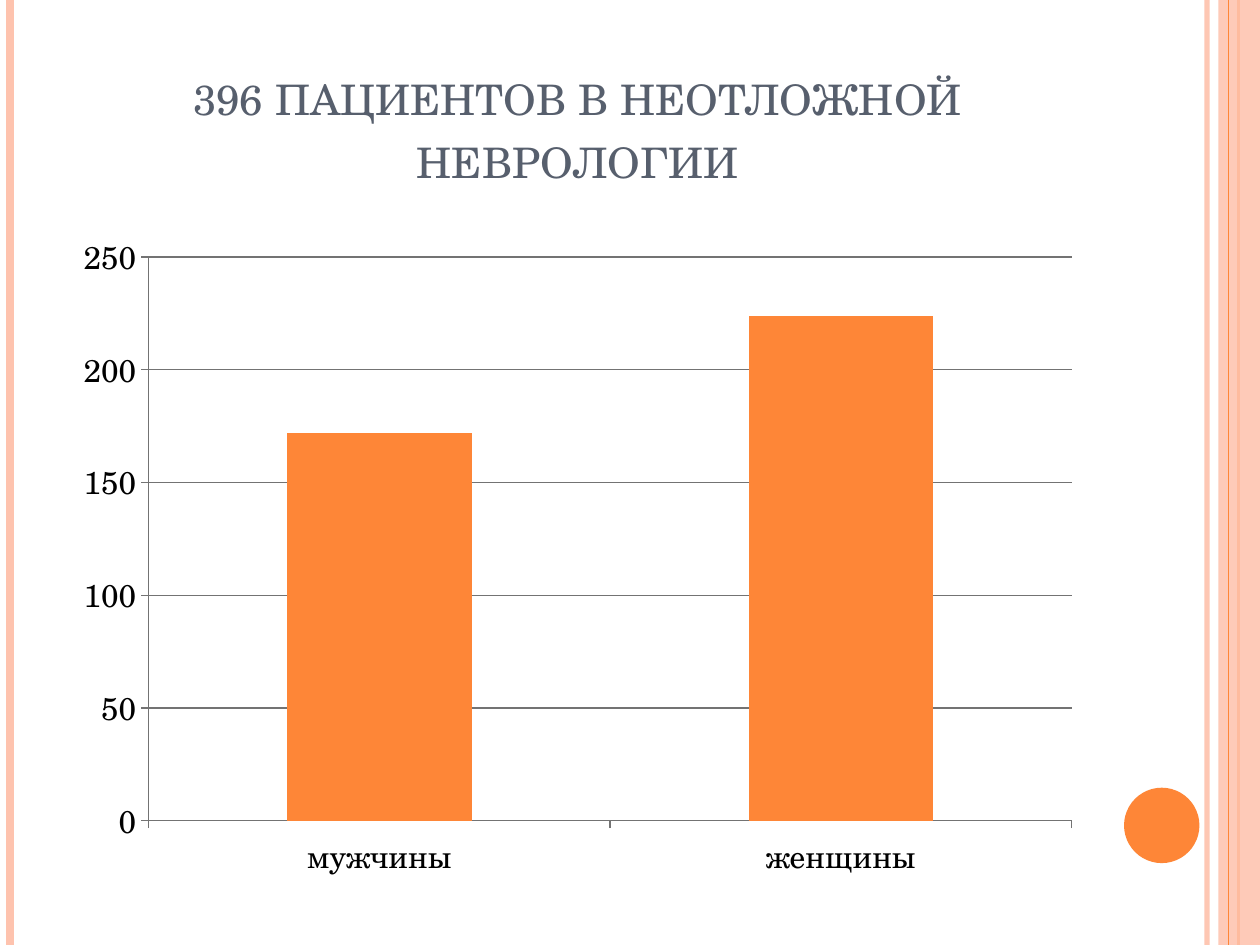
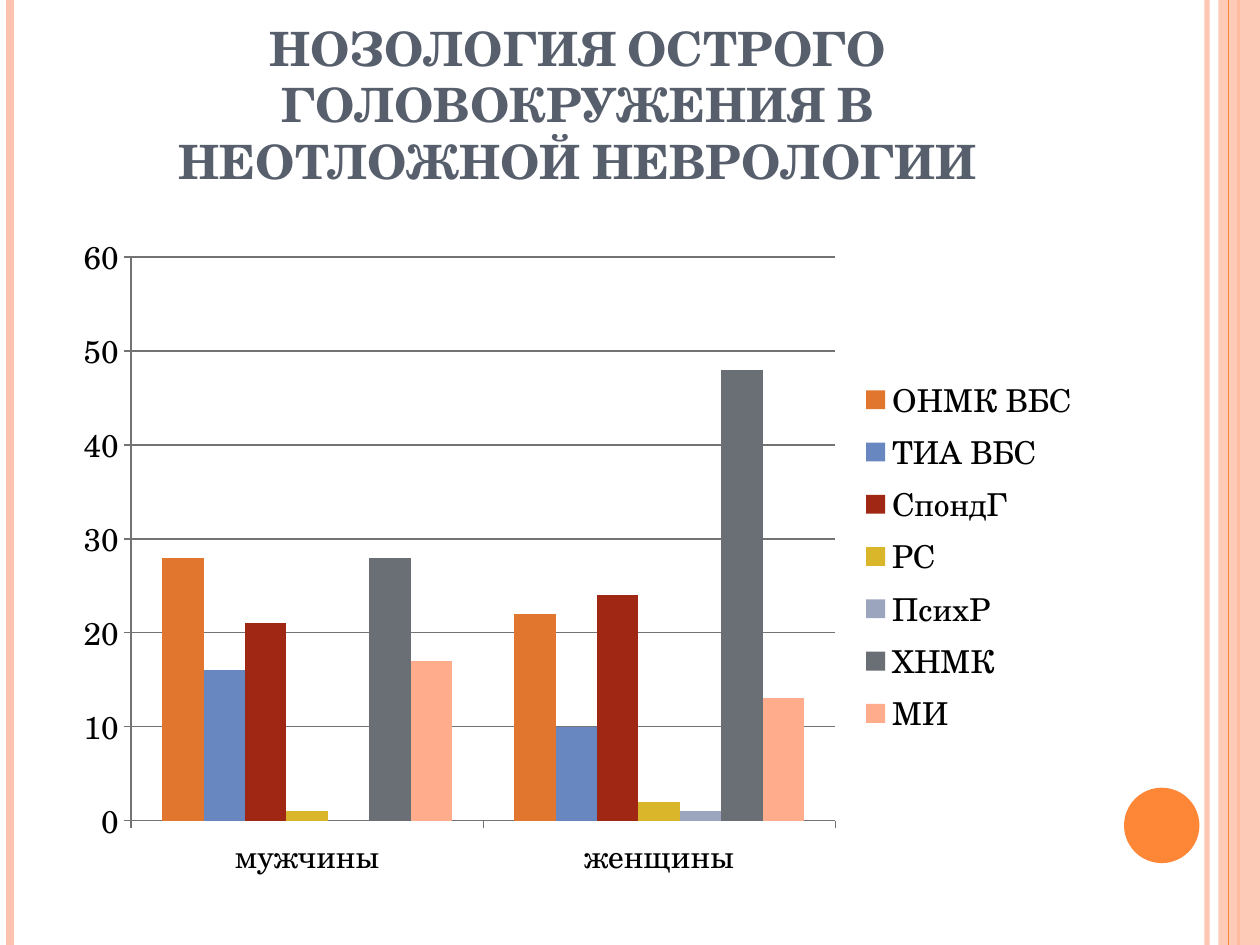
from pptx import Presentation
from pptx import util as u
from pptx.chart import data as chart_data
from pptx.dml.color import RGBColor
from pptx.enum import chart as ch, shapes, text
from pptx.oxml import ns, xmlchemy

# Shared style
ORANGE = RGBColor(0xFE, 0x86, 0x37)
PEACH = RGBColor(0xFE, 0xC3, 0xAE)
SLATE = RGBColor(0x57, 0x5F, 0x6D)
BLACK = RGBColor(0, 0, 0)
AXIS_GREY = RGBColor(0x73, 0x73, 0x73)
RUST = RGBColor(0xE1, 0x77, 0x2F)
BLUE = RGBColor(0x68, 0x87, 0xC0)
RED = RGBColor(0x9F, 0x27, 0x14)
YELLOW = RGBColor(0xDA, 0xB6, 0x2A)
LAVENDER = RGBColor(0x9C, 0xA5, 0xBE)
STEEL = RGBColor(0x6A, 0x6E, 0x75)
SALMON = RGBColor(0xFF, 0xAC, 0x8C)
FONT = "TeX Gyre Schola"

# Boxes: left, top, width, height in cm
SLIDE_W, SLIDE_H = 25.4, 19.05
TITLE_BOX = (1.27, 0.76, 20.75, 3.18)
CHART_BOX = (1.27, 4.45, 20.75, 13.54)
BAND_BOX = (24.56, 0, 0.84, SLIDE_H)
DISC_BOX = (22.66, 15.88, 1.52, 1.52)

GENDERS = ("мужчины", "женщины")
PATIENTS = [("Series 1", (172, 224), ORANGE)]
DIAGNOSES = [
    ("ОНМК ВБС", (28, 22), RUST),
    ("ТИА ВБС", (16, 10), BLUE),
    ("СпондГ", (21, 24), RED),
    ("РС", (1, 2), YELLOW),
    ("ПсихР", (None, 1), LAVENDER),
    ("ХНМК", (28, 48), STEEL),
    ("МИ", (17, 13), SALMON),
]


def cm(box):
    return [u.Cm(v) for v in box]


def set_all(target, values):
    for name, value in values.items():
        setattr(target, name, value)


def set_alpha(sp, percent):
    color = next(sp._element.spPr.iter(ns.qn("a:srgbClr")))
    xmlchemy.OxmlElement("a:alpha")
    alpha = color.makeelement(ns.qn("a:alpha"), {"val": str(percent * 1000)})
    color.append(alpha)


def add_stripe(s, x, color, width, alpha=100):
    line = s.shapes.add_connector(
        shapes.MSO_CONNECTOR.STRAIGHT, *cm((x, 0, x, SLIDE_H)))
    line.line.color.rgb = color
    line.line.width = u.Pt(width)
    line._element.spPr.append(xmlchemy.OxmlElement("a:effectLst"))
    if alpha < 100:
        set_alpha(line, alpha)


def add_solid(s, kind, box, color):
    sp = s.shapes.add_shape(kind, *cm(box))
    sp.shadow.inherit = False
    sp.fill.solid()
    sp.fill.fore_color.rgb = color
    sp.line.fill.background()
    return sp


def add_frame(s):
    """Vertical stripes, right-hand band and disc."""
    add_stripe(s, 24.33, PEACH, 3, alpha=93)
    add_stripe(s, 0.2, PEACH, 4.5)
    add_stripe(s, 24.97, ORANGE, 1.5)
    band = add_solid(s, shapes.MSO_SHAPE.RECTANGLE, BAND_BOX, PEACH)
    set_alpha(band, 87)
    add_stripe(s, 24.77, ORANGE, 0.75)
    add_solid(s, shapes.MSO_SHAPE.OVAL, DISC_BOX, ORANGE)


def add_title(s, box, words, size, bold):
    sp = s.shapes.title
    set_all(sp, dict(zip(("left", "top", "width", "height"), cm(box))))
    tf = sp.text_frame
    set_all(tf, {"word_wrap": True, "auto_size": text.MSO_AUTO_SIZE.NONE,
                 "vertical_anchor": text.MSO_ANCHOR.BOTTOM})
    p = tf.paragraphs[0]
    p.alignment = text.PP_ALIGN.CENTER
    r = p.add_run()
    r.text = words
    set_all(r.font, {"name": FONT, "size": u.Pt(size), "bold": bold})
    r.font.color.rgb = SLATE
    r.font._element.set("cap", "small")


def add_columns(s, box, series, top, step, legend):
    data = chart_data.CategoryChartData()
    data.categories = GENDERS
    for name, values, _ in series:
        data.add_series(name, values)
    chart = s.shapes.add_chart(
        ch.XL_CHART_TYPE.COLUMN_CLUSTERED, *cm(box), data).chart
    set_all(chart, {"has_title": False, "has_legend": legend})
    set_all(chart.font, {"name": FONT, "size": u.Pt(18)})
    chart.font.color.rgb = BLACK
    if legend:
        set_all(chart.legend, {"position": ch.XL_LEGEND_POSITION.RIGHT,
                               "include_in_layout": False})

    # Columns
    plot = chart.plots[0]
    set_all(plot, {"gap_width": 150, "overlap": 0, "vary_by_categories": False})
    for column, (_, _, color) in zip(plot.series, series):
        column.format.fill.solid()
        column.format.fill.fore_color.rgb = color
        column.invert_if_negative = False

    # Axes and gridlines
    values = chart.value_axis
    set_all(values, {"minimum_scale": 0, "maximum_scale": top,
                     "major_unit": step, "has_major_gridlines": True})
    for axis in (values, chart.category_axis):
        axis.major_tick_mark = ch.XL_TICK_MARK.OUTSIDE
    for part in (values, chart.category_axis, values.major_gridlines):
        part.format.line.color.rgb = AXIS_GREY
        part.format.line.width = u.Pt(0.75)


def add_chart_slide(prs, words, size, bold, series, top, step, legend):
    s = prs.slides.add_slide(prs.slide_layouts[5])
    add_frame(s)
    add_title(s, TITLE_BOX, words, size, bold)
    add_columns(s, CHART_BOX, series, top, step, legend)


def main():
    prs = Presentation()
    prs.slide_width, prs.slide_height = cm((SLIDE_W, SLIDE_H))
    add_chart_slide(prs, "396 пациентов в неотложной неврологии",
                    30, False, PATIENTS, 250, 50, legend=False)
    add_chart_slide(prs, "НОЗОЛОГИЯ ОСТРОГО ГОЛОВОКРУЖЕНИЯ В НЕОТЛОЖНОЙ НЕВРОЛОГИИ",
                    27, True, DIAGNOSES, 60, 10, legend=True)
    prs.save("out.pptx")


if __name__ == "__main__":
    main()
